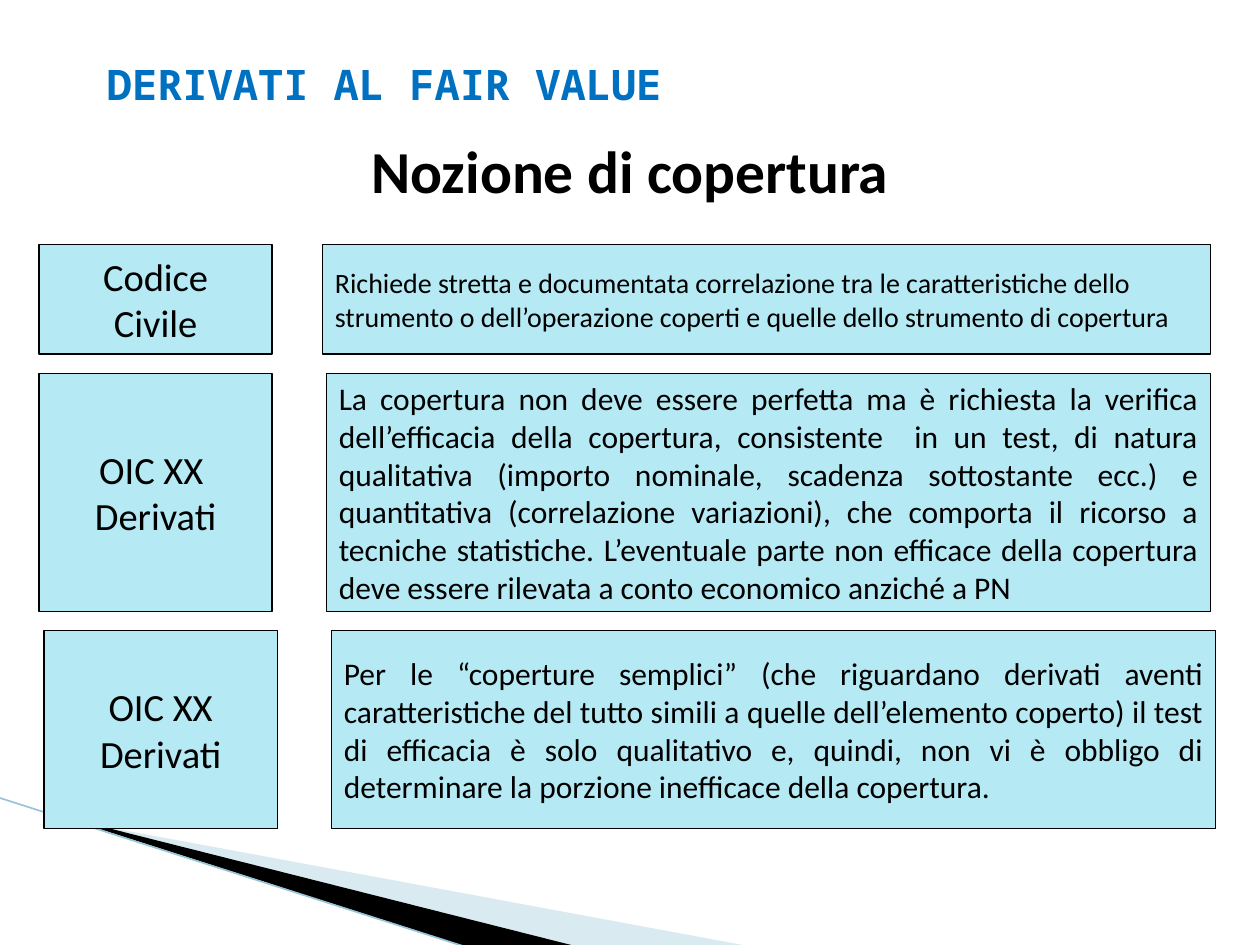
import pptx
import pptx.util
import pptx.dml.color
import pptx.enum.shapes
import pptx.enum.text
import pptx.oxml.ns
from lxml import etree

Pt = pptx.util.Pt
ALIGN = pptx.enum.text.PP_ALIGN
RECTANGLE = pptx.enum.shapes.MSO_SHAPE.RECTANGLE
STRAIGHT = pptx.enum.shapes.MSO_CONNECTOR.STRAIGHT
MIDDLE = pptx.enum.text.MSO_ANCHOR.MIDDLE

HEADING = "DERIVATI AL FAIR VALUE"
TOPIC = "Nozione di copertura"
ROWS = [
    {
        "label": ["Codice", "Civile"],
        "body": "Richiede stretta e documentata correlazione tra le caratteristiche dello "
                "strumento o dell’operazione coperti e quelle dello strumento di copertura",
        "style": "short_body", "height": 62.6, "label_left": 22.3, "body_left": 184.3,
    },
    {
        "label": ["OIC XX ", "Derivati"],
        "body": "La copertura non deve essere perfetta ma è richiesta la verifica "
                "dell’efficacia della copertura, consistente  in un test, di natura "
                "qualitativa (importo nominale, scadenza sottostante ecc.) e quantitativa "
                "(correlazione variazioni), che comporta il ricorso a tecniche statistiche. "
                "L’eventuale parte non efficace della copertura deve essere rilevata a "
                "conto economico anziché a PN",
        "style": "long_body", "height": 136.1, "label_left": 22.3, "body_left": 186.5,
    },
    {
        "label": ["OIC XX", "Derivati"],
        "body": "Per le “coperture semplici” (che riguardano derivati aventi "
                "caratteristiche del tutto simili a quelle dell’elemento coperto) il test "
                "di efficacia è solo qualitativo e, quindi, non vi è obbligo di determinare "
                "la porzione inefficace della copertura.",
        "style": "long_body", "height": 113, "label_left": 25.2, "body_left": 189.4,
    },
]
ROWS_TOP, ROW_GAP = 139.7, 11
LABEL_WIDTH, LABEL_TO_BODY_END = 133.2, 669.6

PALE_WEDGE = [(39.6, 468.7), (428.4, 540.7), (328.3, 540.7), (39.6, 468)]
DARK_WEDGE = [(38.2, 467.3), (329, 540.7), (267.8, 541.4), (38.9, 468)]
EDGE = (-0.7, 455.8, 267.1, 541.4)

THEME = {
    "box": "B5E9F4", "outline": "000000", "outline_width": 0.75,
    "pale_wedge": "A0CBDC", "pale_alpha": 40, "dark_wedge": "000000",
    "edge": "97C5D8", "edge_width": 0.95,
    "text": {
        "heading": {"name": "Noto Sans Mono", "size": 24, "bold": True,
                    "color": "0070C0", "align": ALIGN.LEFT},
        "topic": {"name": "Calibri", "size": 34, "bold": True,
                  "color": "000000", "align": ALIGN.CENTER},
        "label": {"name": "Calibri", "size": 22, "bold": False,
                  "color": "000000", "align": ALIGN.CENTER},
        "short_body": {"name": "Calibri", "size": 16, "bold": False,
                       "color": "000000", "align": ALIGN.LEFT},
        "long_body": {"name": "Calibri", "size": 18, "bold": False,
                      "color": "000000", "align": ALIGN.JUSTIFY},
    },
}


def rgb(code):
    return pptx.dml.color.RGBColor.from_string(code)


def write(shape, lines, style, wrap=True):
    look = THEME["text"][style]
    frame = shape.text_frame
    frame.word_wrap = wrap
    frame.vertical_anchor = MIDDLE
    frame.text = "\n".join(lines)
    font_values = {"name": look["name"], "size": Pt(look["size"]), "bold": look["bold"]}
    for paragraph in frame.paragraphs:
        paragraph.alignment = look["align"]
        for run in paragraph.runs:
            for attribute, value in font_values.items():
                setattr(run.font, attribute, value)
            run.font.color.rgb = rgb(look["color"])


def add_box(slide, left, top, width, height, lines, style, wrap=True):
    box = slide.shapes.add_shape(RECTANGLE, Pt(left), Pt(top), Pt(width), Pt(height))
    box.shadow.inherit = False
    box.fill.solid()
    box.fill.fore_color.rgb = rgb(THEME["box"])
    box.line.color.rgb = rgb(THEME["outline"])
    box.line.width = Pt(THEME["outline_width"])
    write(box, lines, style, wrap)


def add_title(slide, left, top, width, height, text, style):
    title = slide.shapes.add_textbox(Pt(left), Pt(top), Pt(width), Pt(height))
    write(title, [text], style)


def add_wedge(slide, corners, color, alpha=100):
    """Draw a filled outline; alpha is its opacity in percent."""
    points = [(Pt(x), Pt(y)) for x, y in corners]
    builder = slide.shapes.build_freeform(*points[0])
    builder.add_line_segments(points[1:], close=True)
    wedge = builder.convert_to_shape()
    wedge.shadow.inherit = False
    wedge.fill.solid()
    wedge.fill.fore_color.rgb = rgb(color)
    wedge.line.fill.background()
    if alpha < 100:
        color_element = wedge.fill._xPr.find(".//" + pptx.oxml.ns.qn("a:srgbClr"))
        etree.SubElement(color_element, pptx.oxml.ns.qn("a:alpha"), val=str(alpha * 1000))


def add_edge(slide):
    edge = slide.shapes.add_connector(STRAIGHT, *(Pt(value) for value in EDGE))
    edge.line.color.rgb = rgb(THEME["edge"])
    edge.line.width = Pt(THEME["edge_width"])
    etree.SubElement(edge._element.spPr, pptx.oxml.ns.qn("a:effectLst"))


def main():
    deck = pptx.Presentation()
    deck.slide_width, deck.slide_height = Pt(720), Pt(540)
    slide = deck.slides.add_slide(deck.slide_layouts[6])

    add_wedge(slide, PALE_WEDGE, THEME["pale_wedge"], THEME["pale_alpha"])
    add_wedge(slide, DARK_WEDGE, THEME["dark_wedge"])
    add_edge(slide)

    top = ROWS_TOP
    for row in ROWS:
        body_width = row["label_left"] + LABEL_TO_BODY_END - row["body_left"]
        add_box(slide, row["body_left"], top, body_width, row["height"],
                [row["body"]], row["style"])
        add_box(slide, row["label_left"], top, LABEL_WIDTH, row["height"],
                row["label"], "label", wrap=False)
        top += row["height"] + ROW_GAP

    add_title(slide, 54, 29, 499, 38, HEADING, "heading")
    add_title(slide, 0, 60.5, 720, 73.4, TOPIC, "topic")
    deck.save("out.pptx")


if __name__ == "__main__":
    main()
